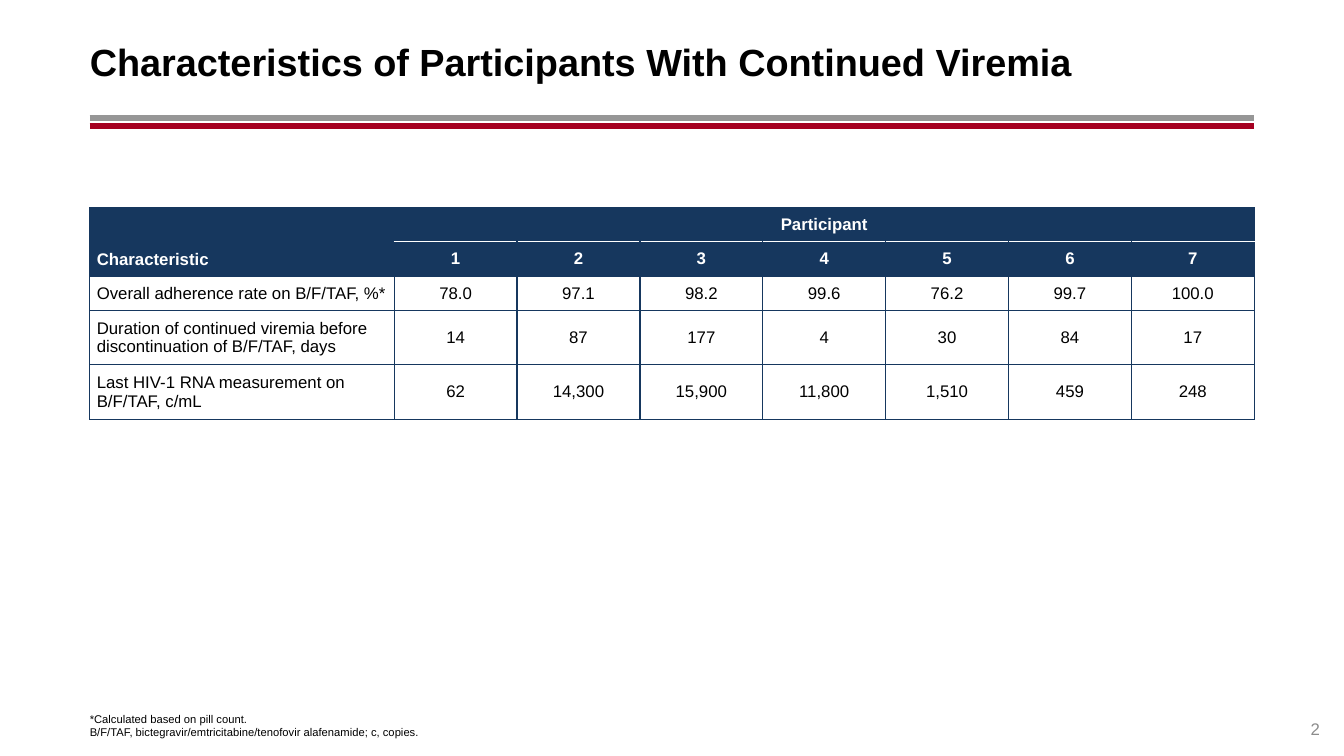
from dataclasses import dataclass

from lxml.etree import SubElement
from pptx import Presentation
from pptx.dml.color import RGBColor
from pptx.enum.shapes import MSO_CONNECTOR
from pptx.enum.text import MSO_ANCHOR, PP_ALIGN
from pptx.oxml.ns import qn
from pptx.slide import Slide
from pptx.table import Table, _Cell
from pptx.text.text import _Paragraph
from pptx.util import Emu, Pt


@dataclass(frozen=True)
class Theme:
    font: str = "Arial"
    navy: str = "16375E"
    white: str = "FFFFFF"
    black: str = "000000"
    red: str = "A50021"
    rule_gray: str = "969696"
    number_gray: str = "8C8C8C"
    title_size: int = 27
    table_size: int = 12
    number_size: int = 12
    note_size: int = 8
    rule_width: float = 4.25
    border_width: int = 1


@dataclass(frozen=True)
class TextBlock:
    text: str
    left: int
    top: int
    width: int
    height: int
    size: int
    color: str
    anchor: MSO_ANCHOR
    align: PP_ALIGN = PP_ALIGN.LEFT
    bold: bool = False


@dataclass(frozen=True)
class Rule:
    top: int
    color: str


THEME = Theme()
LEFT, RIGHT = 89, 1244
WIDTH = RIGHT - LEFT
TABLE_TOP = 206
LABEL_WIDTH = 302
ROW_HEIGHTS = (34, 34, 34, 53, 53)
HEADER_ROWS = 2
CELL_MARGIN = 7
PARTICIPANTS = 7

RULES = (Rule(117, THEME.rule_gray), Rule(125, THEME.red))
TEXT_BLOCKS = (
    TextBlock("Characteristics of Participants With Continued Viremia",
              LEFT, 18, WIDTH, 86, THEME.title_size, THEME.black, MSO_ANCHOR.MIDDLE, bold=True),
    TextBlock("*Calculated based on pill count.\v"
              "B/F/TAF, bictegravir/emtricitabine/tenofovir alafenamide; c, copies.",
              LEFT, 706, WIDTH, 27, THEME.note_size, THEME.black, MSO_ANCHOR.BOTTOM),
    TextBlock("2", RIGHT, 693, 65, 40, THEME.number_size, THEME.number_gray,
              MSO_ANCHOR.BOTTOM, PP_ALIGN.RIGHT),
)
TABLE_ROWS = (
    ("Characteristic", "Participant", *[""] * (PARTICIPANTS - 1)),
    ("", *(str(number + 1) for number in range(PARTICIPANTS))),
    ("Overall adherence rate on B/F/TAF, %*",
     "78.0", "97.1", "98.2", "99.6", "76.2", "99.7", "100.0"),
    ("Duration of continued viremia before discontinuation of B/F/TAF, days",
     "14", "87", "177", "4", "30", "84", "17"),
    ("Last HIV-1 RNA measurement on B/F/TAF, c/mL",
     "62", "14,300", "15,900", "11,800", "1,510", "459", "248"),
)


def px(length: int) -> Emu:
    """Convert px, at 100 to the inch, into EMU."""
    return Emu(length * 9144)


def style_paragraph(para: _Paragraph, size: int, color: str, bold: bool, align: PP_ALIGN) -> None:
    para.alignment = align
    para.font.name = THEME.font
    para.font.size = Pt(size)
    para.font.bold = bold
    para.font.color.rgb = RGBColor.from_string(color)


def add_text(page: Slide, block: TextBlock) -> None:
    box = page.shapes.add_textbox(px(block.left), px(block.top), px(block.width), px(block.height))
    frame = box.text_frame
    frame.word_wrap = True
    frame.vertical_anchor = block.anchor
    frame.margin_left = frame.margin_right = frame.margin_top = frame.margin_bottom = 0
    para = frame.paragraphs[0]
    para.text = block.text
    style_paragraph(para, block.size, block.color, block.bold, block.align)


def add_rule(page: Slide, rule: Rule) -> None:
    line = page.shapes.add_connector(
        MSO_CONNECTOR.STRAIGHT, px(LEFT), px(rule.top), px(RIGHT), px(rule.top))
    line.line.color.rgb = RGBColor.from_string(rule.color)
    line.line.width = Pt(THEME.rule_width)
    SubElement(line._element.spPr, qn("a:effectLst"))


def set_borders(cell: _Cell, top: str, bottom: str) -> None:
    """Draw navy sides, with the given colours above and below."""
    sides = {"L": THEME.navy, "R": THEME.navy, "T": top, "B": bottom}
    properties = cell._tc.get_or_add_tcPr()
    for side, color in sides.items():
        border = SubElement(properties, qn(f"a:ln{side}"), w=str(Pt(THEME.border_width)))
        fill = SubElement(border, qn("a:solidFill"))
        SubElement(fill, qn("a:srgbClr"), val=color)


def fill_cell(table: Table, row: int, column: int, text: str) -> None:
    cell = table.cell(row, column)
    is_header, is_label = row < HEADER_ROWS, column == 0
    set_borders(cell,
                top=THEME.white if row == 1 and not is_label else THEME.navy,
                bottom=THEME.white if row == 0 and not is_label else THEME.navy)
    cell.fill.solid()
    cell.fill.fore_color.rgb = RGBColor.from_string(THEME.navy if is_header else THEME.white)
    cell.margin_left = cell.margin_right = px(CELL_MARGIN)
    cell.margin_top = cell.margin_bottom = px(CELL_MARGIN)
    cell.vertical_anchor = MSO_ANCHOR.BOTTOM if is_header and is_label else MSO_ANCHOR.MIDDLE
    para = cell.text_frame.paragraphs[0]
    para.text = text
    style_paragraph(para, THEME.table_size, THEME.white if is_header else THEME.black,
                    is_header, PP_ALIGN.LEFT if is_label else PP_ALIGN.CENTER)


def add_characteristics_table(page: Slide) -> None:
    frame = page.shapes.add_table(len(TABLE_ROWS), PARTICIPANTS + 1, px(LEFT), px(TABLE_TOP),
                                  px(WIDTH), px(sum(ROW_HEIGHTS)))
    table = frame.table
    table.first_row = table.horz_banding = False
    table.columns[0].width = px(LABEL_WIDTH)
    for column in range(1, PARTICIPANTS + 1):
        table.columns[column].width = Emu(px(WIDTH - LABEL_WIDTH) // PARTICIPANTS)
    for row, height in enumerate(ROW_HEIGHTS):
        table.rows[row].height = px(height)
    for row, texts in enumerate(TABLE_ROWS):
        for column, text in enumerate(texts):
            fill_cell(table, row, column, text)
    table.cell(0, 0).merge(table.cell(1, 0))
    table.cell(0, 1).merge(table.cell(0, PARTICIPANTS))


def main() -> None:
    deck = Presentation()
    deck.slide_width, deck.slide_height = px(1333), px(750)
    page = deck.slides.add_slide(deck.slide_layouts[6])
    for rule in RULES:
        add_rule(page, rule)
    for block in TEXT_BLOCKS:
        add_text(page, block)
    add_characteristics_table(page)
    deck.save("out.pptx")


if __name__ == "__main__":
    main()
